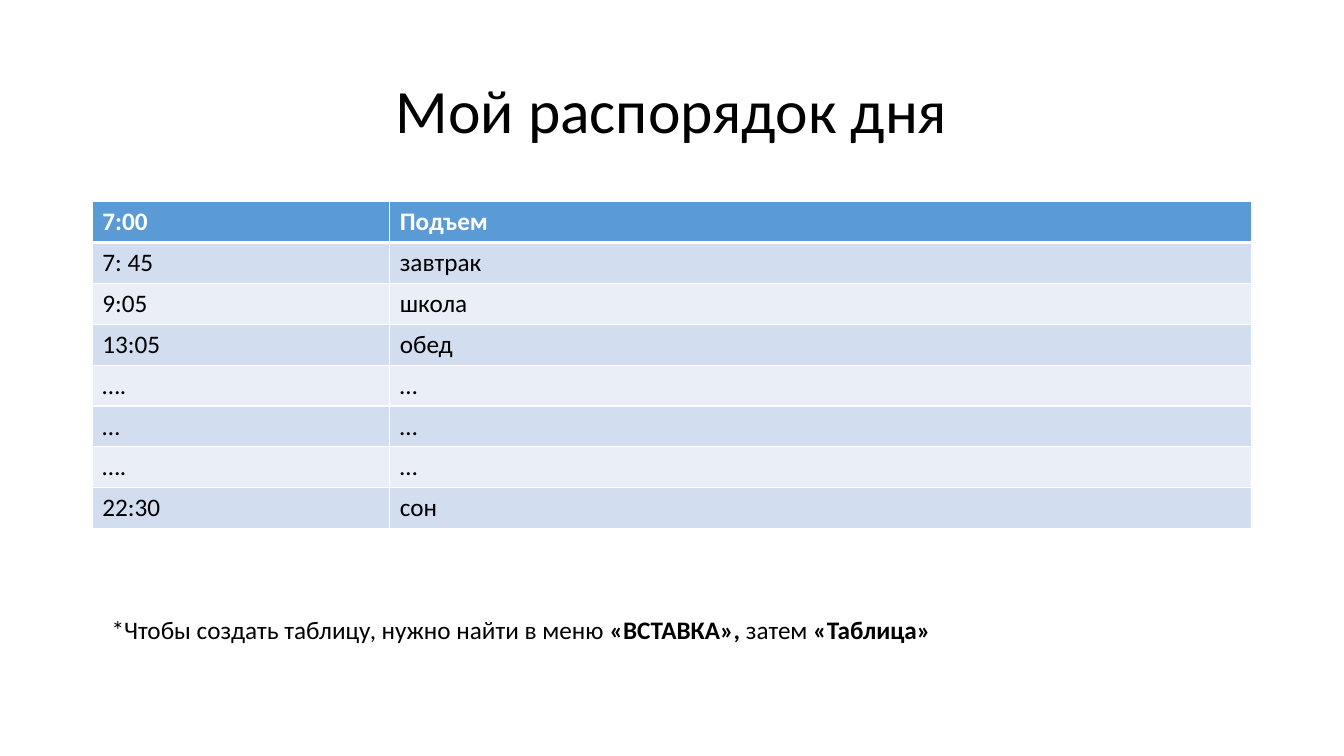
from lxml import etree
from pptx import Presentation
from pptx.dml.color import RGBColor
from pptx.enum.text import MSO_ANCHOR, MSO_AUTO_SIZE, PP_ALIGN
from pptx.oxml.ns import qn
from pptx.util import Inches, Pt

CENTER = PP_ALIGN.CENTER
MIDDLE = MSO_ANCHOR.MIDDLE
GROW = MSO_AUTO_SIZE.SHAPE_TO_FIT_TEXT

COLORS = {
    "text": "000000",
    "white": "FFFFFF",
    "header": "5B9BD5",
    "odd": "D2DEEF",
    "even": "EAEFF7",
}
GRID_COLUMNS, GRID_ROWS = 160, 90
CELL = Inches(1 / 12)

SCHEDULE = [
    ("7:00", "Подъем"),
    ("7: 45", "завтрак"),
    ("9:05", "школа"),
    ("13:05", "обед"),
    ("….", "…"),
    ("…", "…"),
    ("….", "…"),
    ("22:30", "сон"),
]
NOTE = [
    ("*Чтобы создать таблицу, нужно найти в меню ", False),
    ("«ВСТАВКА», ", True),
    ("затем ", False),
    ("«Таблица»", True),
]


class SlideBuilder:
    """Place styled elements on one slide, measured in grid cells."""

    def __init__(self, slide, font_name="Calibri"):
        self.slide = slide
        self.font_name = font_name

    def box(self, *cells):
        return [round(cell * CELL) for cell in cells]

    def apply(self, target, values):
        for name, value in values.items():
            setattr(target, name, value)

    def add_runs(self, paragraph, runs, size, color="text"):
        for text, bold in runs:
            run = paragraph.add_run()
            run.text = text
            self.apply(run.font, {"name": self.font_name, "size": Pt(size), "bold": bold})
            run.font.color.rgb = RGBColor.from_string(COLORS[color])

    def text(self, position, runs, size, frame_format, paragraph_format):
        frame = self.slide.shapes.add_textbox(*self.box(*position)).text_frame
        self.apply(frame, frame_format)
        paragraph = frame.paragraphs[0]
        self.apply(paragraph, paragraph_format)
        self.add_runs(paragraph, runs, size)

    def border(self, cell, edge, width):
        properties = cell._tc.get_or_add_tcPr()
        line = etree.SubElement(properties, qn(f"a:ln{edge}"), w=str(Pt(width)))
        fill = etree.SubElement(line, qn("a:solidFill"))
        etree.SubElement(fill, qn("a:srgbClr"), val=COLORS["white"])

    def table(self, position, column_widths, records, size):
        shape = self.slide.shapes.add_table(
            len(records), len(column_widths), *self.box(*position))
        table = shape.table
        for column, width in zip(table.columns, self.box(*column_widths)):
            column.width = width
        for row_index, record in enumerate(records):
            is_header = row_index == 0
            band = "header" if is_header else "odd" if row_index % 2 else "even"
            color = "white" if is_header else "text"
            widths = {"L": 1, "R": 1, "T": 3 if row_index == 1 else 1,
                      "B": 3 if is_header else 1}
            for column_index, text in enumerate(record):
                cell = table.cell(row_index, column_index)
                for edge, width in widths.items():
                    self.border(cell, edge, width)
                cell.fill.solid()
                cell.fill.fore_color.rgb = RGBColor.from_string(COLORS[band])
                self.add_runs(cell.text_frame.paragraphs[0], [(text, is_header)], size, color)


def main():
    presentation = Presentation()
    presentation.slide_width = GRID_COLUMNS * CELL
    presentation.slide_height = GRID_ROWS * CELL
    builder = SlideBuilder(presentation.slides.add_slide(presentation.slide_layouts[6]))
    builder.text((11, 4.8, 138, 17.4), [("Мой распорядок дня", False)], 44,
                 {"word_wrap": True, "vertical_anchor": MIDDLE},
                 {"alignment": CENTER, "line_spacing": 0.9})
    builder.table((11, 24, 138, 38.94), (35.4, 102.6), SCHEDULE, 18)
    builder.text((12.1, 72.5, 101, 4.85), NOTE, 18,
                 {"word_wrap": False, "auto_size": GROW}, {})
    presentation.save("out.pptx")


if __name__ == "__main__":
    main()
